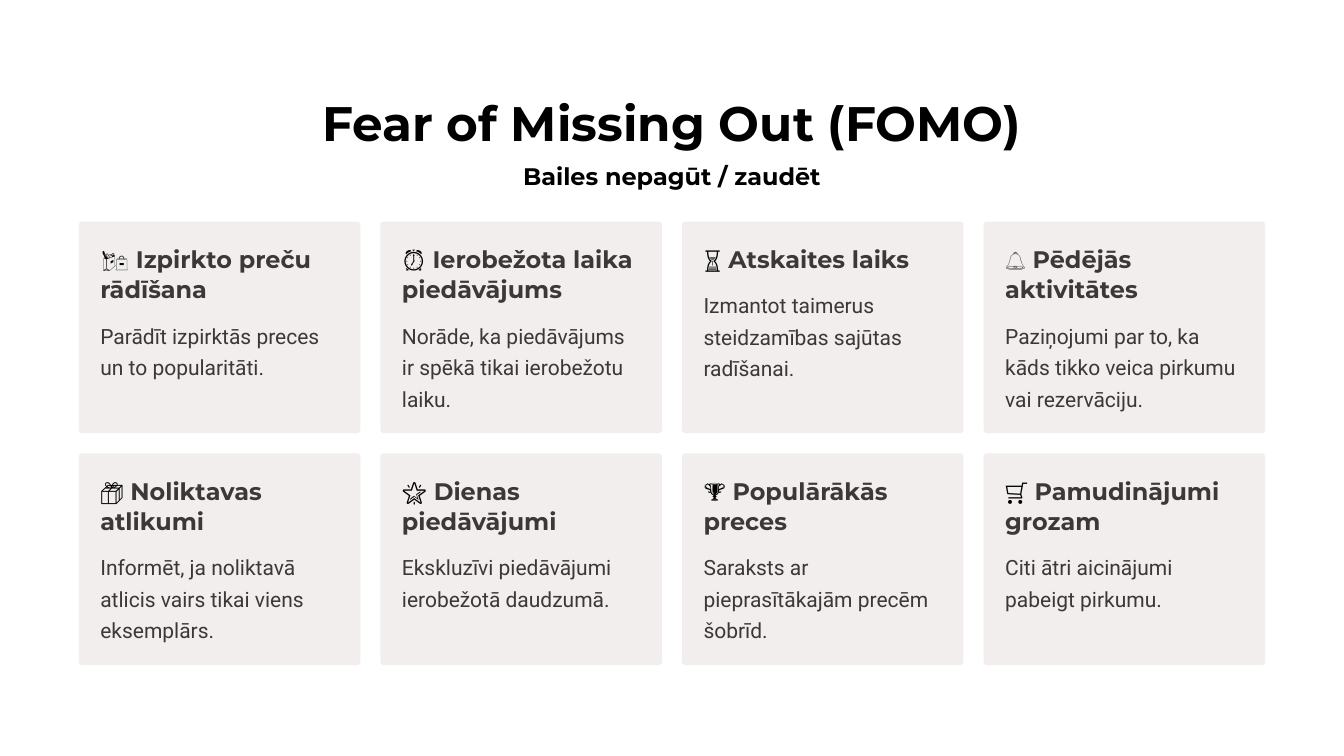
import pptx
import pptx.dml.color
import pptx.enum.shapes
import pptx.enum.text
import pptx.util

Cm, Pt = pptx.util.Cm, pptx.util.Pt
ALIGN = pptx.enum.text.PP_ALIGN

TITLE = "Fear of Missing Out (FOMO)"
SUBTITLE = "Bailes nepagūt / zaudēt"
# icon, heading, heading lines, body
CARDS = [
    ("🛍️", "Izpirkto preču rādīšana", 2, "Parādīt izpirktās preces un to popularitāti."),
    ("⏰", "Ierobežota laika piedāvājums", 2,
     "Norāde, ka piedāvājums ir spēkā tikai ierobežotu laiku."),
    ("⏳", "Atskaites laiks", 1, "Izmantot taimerus steidzamības sajūtas radīšanai."),
    ("🔔", "Pēdējās aktivitātes", 2,
     "Paziņojumi par to, ka kāds tikko veica pirkumu vai rezervāciju."),
    ("📦", "Noliktavas atlikumi", 2,
     "Informēt, ja noliktavā atlicis vairs tikai viens eksemplārs."),
    ("🌟", "Dienas piedāvājumi", 2, "Ekskluzīvi piedāvājumi ierobežotā daudzumā."),
    ("🏆", "Populārākās preces", 2, "Saraksts ar pieprasītākajām precēm šobrīd."),
    ("🛒", "Pamudinājumi grozam", 2, "Citi ātri aicinājumi pabeigt pirkumu."),
]

BLACK, WHITE, INK, CARD_FILL = "000000", "FFFFFF", "3D3838", "F2EEEE"
HEADING_FONT, BODY_FONT = "Montserrat", "Roboto"
SLIDE_W, SLIDE_H = 40.64, 22.86
COLUMNS = 4
CARD_W, CARD_H, GAP = 8.51, 6.4, 0.61
GRID_LEFT = (SLIDE_W - COLUMNS * CARD_W - (COLUMNS - 1) * GAP) / 2
GRID_TOP = 6.7
PAD, HEADING_LINE, BODY_GAP, BODY_H = 0.65, 0.92, 0.39, 2.86


def paint(color_holder, color):
    color_holder.rgb = pptx.dml.color.RGBColor.from_string(color)


def fill_text(shape, runs, size, spacing, font=HEADING_FONT, bold=True,
              align=ALIGN.LEFT, wrap=True):
    """Write (text, colour) runs as one paragraph in a frame without margins."""
    frame = shape.text_frame
    frame.margin_left = frame.margin_top = frame.margin_right = frame.margin_bottom = 0
    frame.word_wrap = wrap
    frame.auto_size = pptx.enum.text.MSO_AUTO_SIZE.NONE
    frame.vertical_anchor = pptx.enum.text.MSO_ANCHOR.TOP
    paragraph = frame.paragraphs[0]
    paragraph.alignment = align
    paragraph.line_spacing = Pt(spacing)
    for text, color in runs:
        run = paragraph.add_run()
        run.text = text
        run.font.name, run.font.size, run.font.bold = font, Pt(size), bold
        paint(run.font.color, color)


def add_card(slide, left, top, icon, heading, heading_lines, body):
    card = slide.shapes.add_shape(pptx.enum.shapes.MSO_SHAPE.ROUNDED_RECTANGLE,
                                  Cm(left), Cm(top), Cm(CARD_W), Cm(CARD_H))
    card.adjustments[0] = 0.015
    card.shadow.inherit = False
    card.fill.solid()
    paint(card.fill.fore_color, CARD_FILL)
    card.line.fill.background()

    text_left, text_w = Cm(left + PAD), Cm(CARD_W - 2 * PAD)
    heading_h = heading_lines * HEADING_LINE
    heading_box = slide.shapes.add_textbox(text_left, Cm(top + PAD), text_w, Cm(heading_h))
    fill_text(heading_box, [(icon, BLACK), (" " + heading, INK)], 20.5, 26,
              wrap=heading_lines > 1)
    body_box = slide.shapes.add_textbox(text_left, Cm(top + PAD + heading_h + BODY_GAP),
                                        text_w, Cm(BODY_H))
    fill_text(body_box, [(body, INK)], 18, 27, font=BODY_FONT, bold=False)


def main():
    deck = pptx.Presentation()
    deck.slide_width, deck.slide_height = Cm(SLIDE_W), Cm(SLIDE_H)
    slide = deck.slides.add_slide(deck.slide_layouts[5])
    slide.background.fill.solid()
    paint(slide.background.fill.fore_color, WHITE)

    title = slide.shapes.title
    title.left, title.top, title.width, title.height = Cm(9.63), Cm(2.74), Cm(21.38), Cm(1.85)
    fill_text(title, [(TITLE, BLACK)], 41.5, 52, align=ALIGN.CENTER, wrap=False)
    subtitle = slide.shapes.add_textbox(Cm(15.72), Cm(4.85), Cm(9.2), Cm(0.92))
    fill_text(subtitle, [(SUBTITLE, BLACK)], 20.5, 26, align=ALIGN.CENTER, wrap=False)

    for index, card in enumerate(CARDS):
        row, column = divmod(index, COLUMNS)
        add_card(slide, GRID_LEFT + column * (CARD_W + GAP),
                 GRID_TOP + row * (CARD_H + GAP), *card)
    deck.save("out.pptx")


if __name__ == "__main__":
    main()
